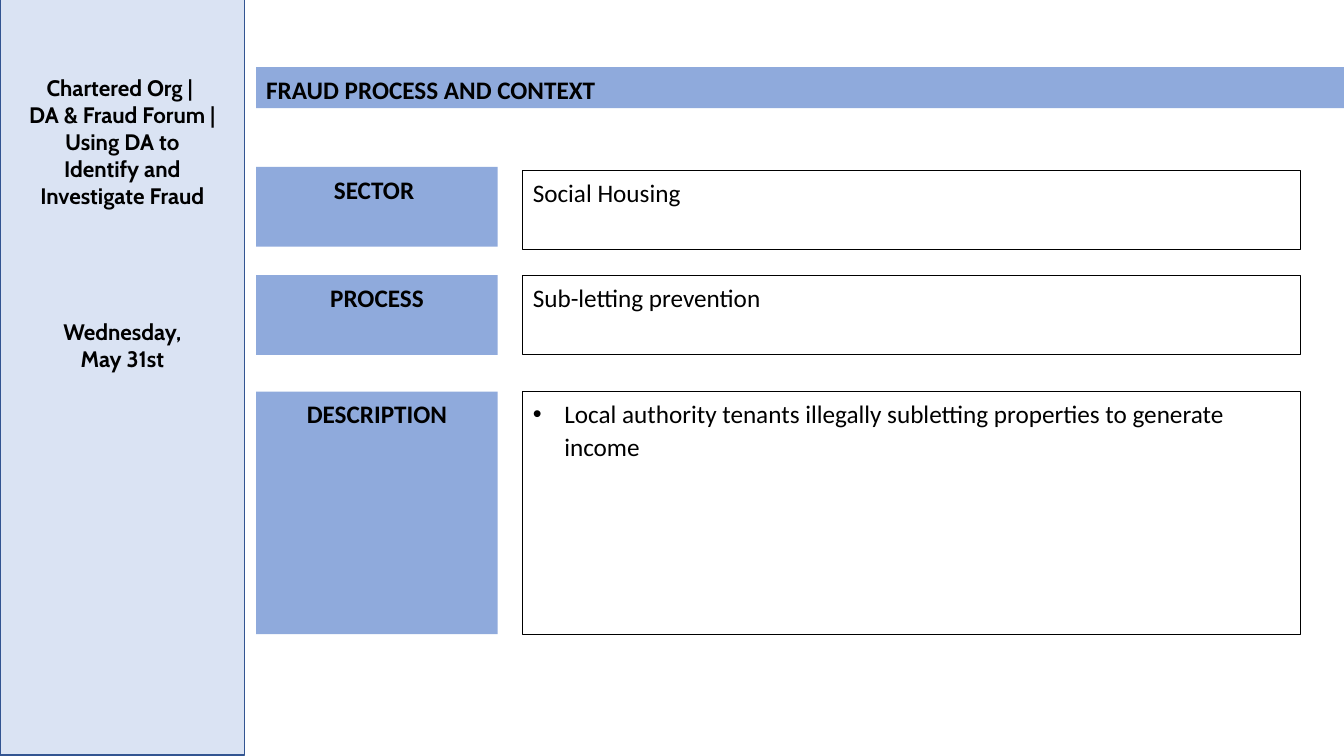
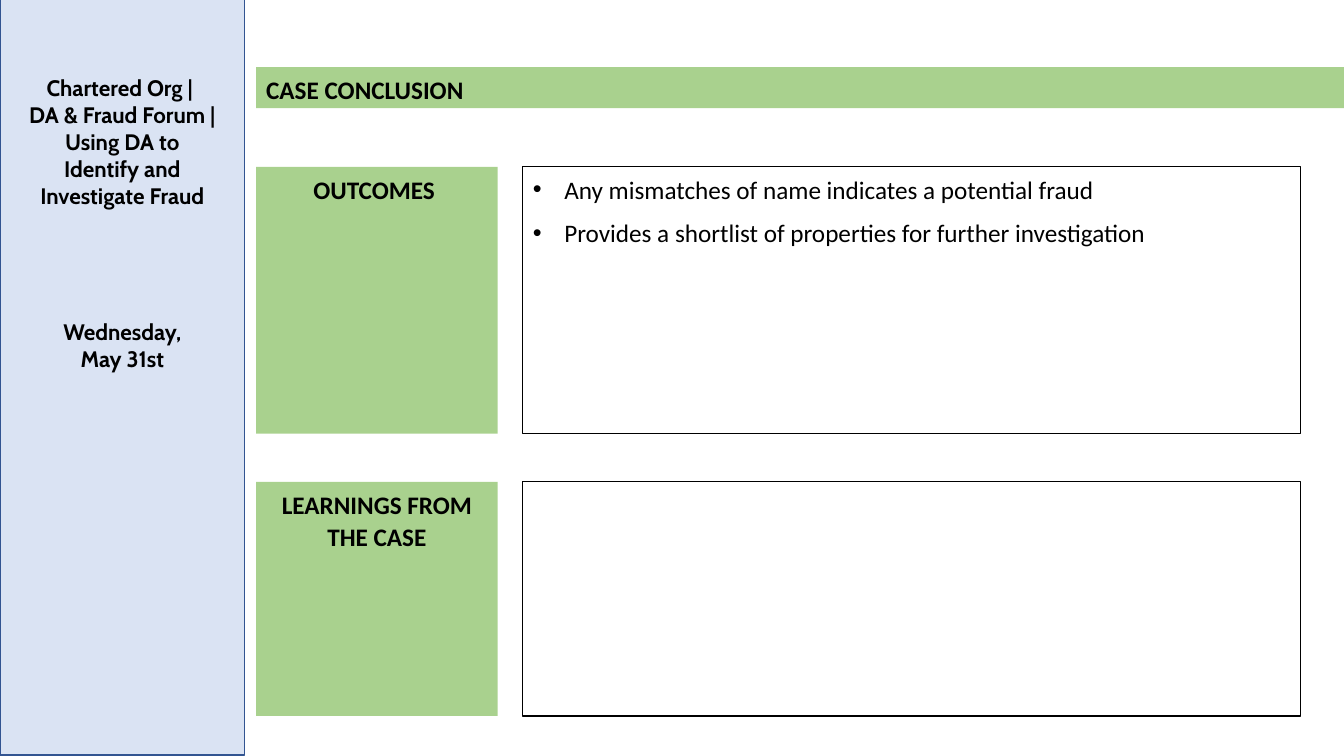
from lxml import etree
from pptx import Presentation
from pptx.dml.color import RGBColor as RGB
from pptx.enum.shapes import MSO_SHAPE as SHAPE
from pptx.enum.text import MSO_ANCHOR as ANCHOR, PP_ALIGN as ALIGN
from pptx.oxml.ns import qn
from pptx.util import Pt

PX = 9525
HUES = {"side": "DAE3F3", "edge": "325491", "blue": "8FAADC",
        "green": "A9D18E", "white": "FFFFFF", "black": "000000"}

# Shared columns: left edge and width
SIDE = (0, 233)
BAND = (244, 1036)
LABEL = (244, 230)
BODY = (498, 741)
INDENT = 30

# Each row: top of label, top of body, height, label, body lines, bulleted
PAGES = [
    ("FRAUD PROCESS AND CONTEXT", "blue", [
        (159, 162, 76, "SECTOR ", ["Social Housing"], False),
        (262, 262, 76, "PROCESS", ["Sub-letting prevention"], False),
        (373, 373, 231, "DESCRIPTION",
         ["Local authority tenants illegally subletting properties "
          "to generate income"], True),
    ]),
    ("CASE CONCLUSION", "green", [
        (159, 159, 254, "OUTCOMES ",
         ["Any mismatches of name indicates a potential fraud",
          "Provides a shortlist of properties for further investigation"],
         True),
        (459, 459, 223, "LEARNINGS FROM THE CASE", [], False),
    ]),
]

# Sidebar texts: top, height, lines
NOTES = [
    (66, 139, ["Chartered Org | ", "DA & Fraud Forum | Using DA to",
               "Identify and", "Investigate Fraud"]),
    (298, 61, ["Wednesday,", "May 31st"]),
]


def write(shape, lines, font="Calibri", size=18, bold=False,
          align=ALIGN.LEFT, space=1.07, after=8, bullet=False):
    frame = shape.text_frame
    frame.word_wrap = True
    frame.vertical_anchor = ANCHOR.TOP
    for i, line in enumerate(lines):
        para = frame.add_paragraph() if i else frame.paragraphs[0]
        para.text = line
        para.alignment = align
        para.line_spacing = space
        para.space_after = Pt(after)
        if bullet:
            props = para._p.get_or_add_pPr()
            props.set("marL", str(INDENT * PX))
            props.set("indent", str(-INDENT * PX))
            etree.SubElement(props, qn("a:buFont"), typeface="Arial")
            etree.SubElement(props, qn("a:buChar"), char="•")
        para.font.name = font
        para.font.size = Pt(size)
        para.font.bold = bold
        para.font.color.rgb = RGB.from_string(HUES["black"])


def box(slide, col, top, high, fill, line=None, width=0.75):
    left, wide = col
    shape = slide.shapes.add_shape(
        SHAPE.RECTANGLE, left * PX, top * PX, wide * PX, high * PX)
    shape.shadow.inherit = False
    shape.fill.solid()
    shape.fill.fore_color.rgb = RGB.from_string(HUES[fill])
    if line:
        shape.line.color.rgb = RGB.from_string(HUES[line])
        shape.line.width = Pt(width)
    else:
        shape.line.fill.background()
    return shape


deck = Presentation()
deck.slide_width = 1280 * PX
deck.slide_height = 720 * PX

for title, hue, rows in PAGES:
    slide = deck.slides.add_slide(deck.slide_layouts[6])

    # Sidebar
    box(slide, SIDE, -1, 720, "side", line="edge", width=1)
    for top, high, lines in NOTES:
        note = slide.shapes.add_textbox(
            SIDE[0] * PX, top * PX, SIDE[1] * PX, high * PX)
        write(note, lines, font="Cabin", size=16, bold=True,
              align=ALIGN.CENTER, space=1.0, after=0)

    # Title band
    write(box(slide, BAND, 64, 39, hue), [title], bold=True)

    # Labels and their bodies
    for top, start, high, label, lines, bullet in rows:
        write(box(slide, LABEL, top, high, hue), [label],
              bold=True, align=ALIGN.CENTER)
        write(box(slide, BODY, start, high, "white", line="black"),
              lines, bullet=bullet)

deck.save("out.pptx")
